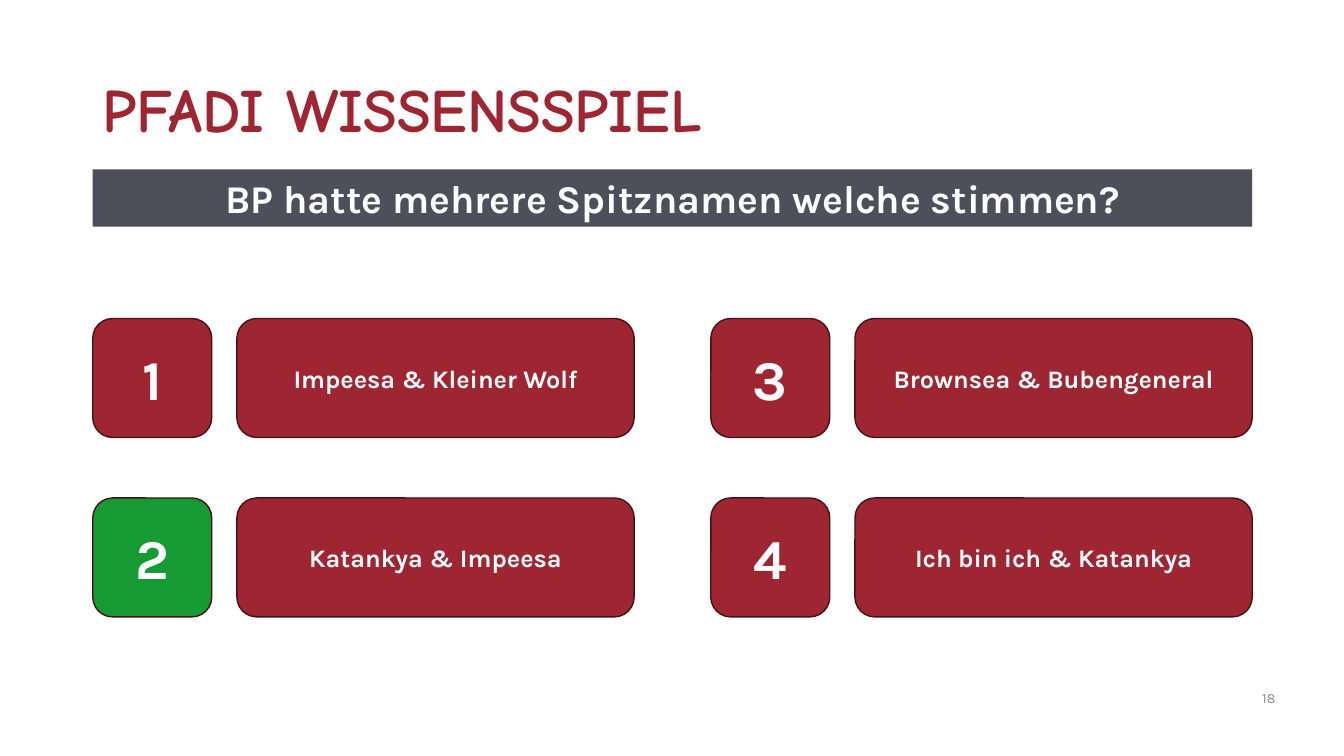
from dataclasses import dataclass

from pptx import Presentation
from pptx.dml.color import RGBColor
from pptx.enum.shapes import MSO_SHAPE
from pptx.enum.text import MSO_ANCHOR, MSO_AUTO_SIZE, PP_ALIGN
from pptx.util import Pt

EMU_PER_PX = 9144  # 100 px to the inch
RECTANGLE, ROUNDED = MSO_SHAPE.RECTANGLE, MSO_SHAPE.ROUNDED_RECTANGLE
TOP, MIDDLE = MSO_ANCHOR.TOP, MSO_ANCHOR.MIDDLE
LEFT, CENTER = PP_ALIGN.LEFT, PP_ALIGN.CENTER
NO_AUTOFIT = MSO_AUTO_SIZE.NONE
TITLE_ONLY = 5


@dataclass(frozen=True)
class Theme:
    red: RGBColor = RGBColor(0x9D, 0x26, 0x32)
    dark_red: RGBColor = RGBColor(0x45, 0x11, 0x16)
    green: RGBColor = RGBColor(0x15, 0x9A, 0x34)
    slate: RGBColor = RGBColor(0x4D, 0x4F, 0x5A)
    gray: RGBColor = RGBColor(0x8C, 0x8C, 0x8C)
    white: RGBColor = RGBColor(0xFF, 0xFF, 0xFF)
    title_font: str = "Comic Neue"
    body_font: str = "Karla"
    title_size: int = 44
    number_size: int = 40
    question_size: int = 28
    answer_size: int = 18
    page_size: int = 10


THEME = Theme()

# Answer grid, filled column by column
MARGIN, CONTENT_WIDTH = 92, 1150
GRID_TOP, COLUMN_STEP, ROW_STEP = 316, 613, 178
TILE, ANSWER_OFFSET, ANSWER_WIDTH = 118, 143, 394
ROWS = 2
ANSWERS = [
    "Impeesa & Kleiner Wolf",
    "Katankya & Impeesa",
    "Brownsea & Bubengeneral",
    "Ich bin ich & Katankya",
]
CORRECT_ANSWER = 2


def px(*lengths):
    return [length * EMU_PER_PX for length in lengths]


def write(frame, text, size, color, font=THEME.body_font, bold=True,
          align=CENTER, anchor=MIDDLE):
    frame.word_wrap = True
    frame.auto_size = NO_AUTOFIT
    frame.vertical_anchor = anchor
    paragraph = frame.paragraphs[0]
    paragraph.text = text
    paragraph.alignment = align
    paragraph.font.name = font
    paragraph.font.size = Pt(size)
    paragraph.font.bold = bold
    paragraph.font.color.rgb = color
    return paragraph


def add_title(slide, text):
    title = slide.shapes.title
    title.left, title.top, title.width, title.height = px(
        MARGIN, 39, CONTENT_WIDTH, 145)
    heading = write(title.text_frame, text, THEME.title_size, THEME.red,
                    font=THEME.title_font, align=LEFT)
    heading.line_spacing = 0.9


def add_panel(slide, kind, box, fill, text, size, outline=None, anchor=MIDDLE):
    panel = slide.shapes.add_shape(kind, *px(*box))
    panel.shadow.inherit = False
    panel.fill.solid()
    panel.fill.fore_color.rgb = fill
    if outline is None:
        panel.line.fill.background()
    else:
        panel.line.color.rgb = outline
        panel.line.width = Pt(1)
    write(panel.text_frame, text, size, THEME.white, anchor=anchor)


def add_answer(slide, number, answer):
    column, row = divmod(number - 1, ROWS)
    left = MARGIN + column * COLUMN_STEP
    top = GRID_TOP + row * ROW_STEP
    number_fill = THEME.green if number == CORRECT_ANSWER else THEME.red
    add_panel(slide, ROUNDED, (left, top, TILE, TILE), number_fill,
              str(number), THEME.number_size, THEME.dark_red)
    add_panel(slide, ROUNDED, (left + ANSWER_OFFSET, top, ANSWER_WIDTH, TILE),
              THEME.red, answer, THEME.answer_size, THEME.dark_red)


def add_page_number(slide, number):
    page = slide.shapes.add_textbox(*px(1242, 672, 91, 40))
    write(page.text_frame, number, THEME.page_size, THEME.gray,
          bold=False, align=LEFT)


def main():
    deck = Presentation()
    deck.slide_width, deck.slide_height = px(1333, 750)
    slide = deck.slides.add_slide(deck.slide_layouts[TITLE_ONLY])

    # Title, page number and question
    add_title(slide, "PFADI WISSENSSPIEL")
    add_page_number(slide, "18")
    add_panel(slide, RECTANGLE, (MARGIN, 168, CONTENT_WIDTH, 57), THEME.slate,
              "BP hatte mehrere Spitznamen welche stimmen?",
              THEME.question_size, anchor=TOP)

    # Numbered answers
    for number, answer in enumerate(ANSWERS, start=1):
        add_answer(slide, number, answer)

    deck.save("out.pptx")


if __name__ == "__main__":
    main()
